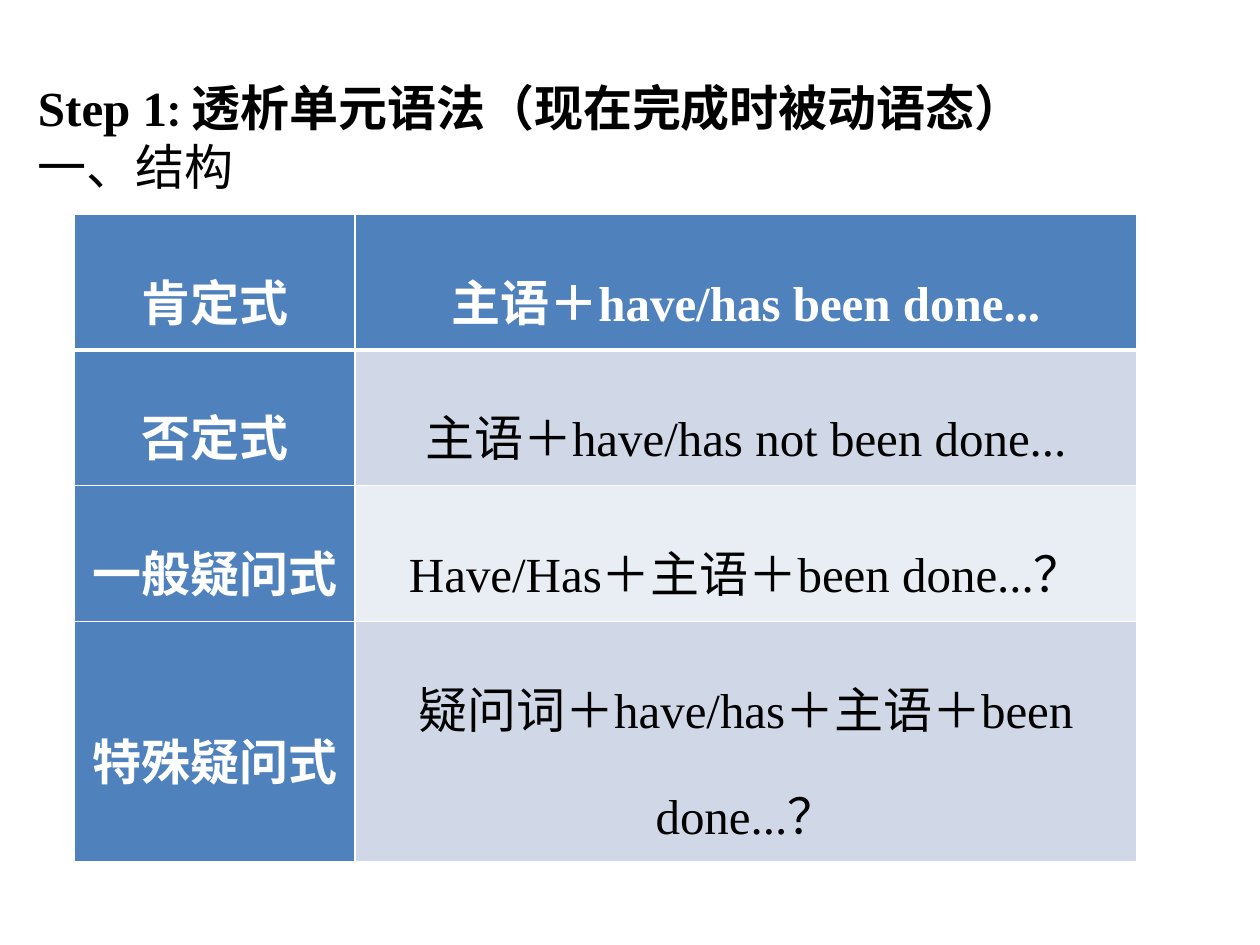
from lxml.etree import SubElement
from pptx import Presentation
from pptx.dml.color import RGBColor
from pptx.enum.text import MSO_ANCHOR, MSO_AUTO_SIZE, PP_ALIGN
from pptx.oxml.ns import qn
from pptx.util import Pt

WHITE = RGBColor(0xFF, 0xFF, 0xFF)
BLACK = RGBColor(0x00, 0x00, 0x00)
BLUE = RGBColor(0x4F, 0x81, 0xBD)
BAND_DARK = RGBColor(0xD0, 0xD8, 0xE8)
BAND_LIGHT = RGBColor(0xE9, 0xED, 0xF4)
FONT = "Times New Roman"
SIZE = Pt(28)

TITLE_LINES = [
    ([("Step 1", FONT), (": ", "Calibri"), ("透析单元语法（现在完成时被动语态）", FONT)], True),
    ([("一、结构", FONT)], False),
]
STRUCTURES = [
    ("肯定式", "主语＋have/has been done..."),
    ("否定式", "主语＋have/has not been done..."),
    ("一般疑问式", "Have/Has＋主语＋been done...？"),
    ("特殊疑问式", "疑问词＋have/has＋主语＋been done...？"),
]
COLUMN_WIDTHS = [160.5, 446.5]
ROW_HEIGHTS = [77.5, 77.5, 77.5, 137.5]
TABLE_LEFT, TABLE_TOP = 42.5, 122.5
CELL_INSET = Pt(8.5)


def add_title(slide):
    title = slide.shapes.title
    title.left, title.top, title.width, title.height = Pt(14.5), Pt(40.5), Pt(584.5), Pt(75)
    frame = title.text_frame
    frame.word_wrap = False
    frame.auto_size = MSO_AUTO_SIZE.SHAPE_TO_FIT_TEXT
    frame.vertical_anchor = MSO_ANCHOR.MIDDLE
    for index, (runs, bold) in enumerate(TITLE_LINES):
        paragraph = frame.add_paragraph() if index else frame.paragraphs[0]
        paragraph.alignment = PP_ALIGN.LEFT
        paragraph.font.size = SIZE
        paragraph.font.bold = bold
        paragraph.font.color.rgb = BLACK
        for text, font_name in runs:
            run = paragraph.add_run()
            run.text = text
            run.font.name = font_name


def set_borders(cell, widths):
    """Draw white borders; widths are points for left, right, top, bottom."""
    properties = cell._tc.get_or_add_tcPr()
    for side, width in zip("LRTB", widths):
        line = SubElement(properties, qn(f"a:ln{side}"), w=str(Pt(width)))
        fill = SubElement(line, qn("a:solidFill"))
        SubElement(fill, qn("a:srgbClr"), val=str(WHITE))


def fill_cell(cell, text, row, column):
    is_header = row == 0 or column == 0
    set_borders(cell, (1, 1, 3 if row == 1 else 1, 3 if row == 0 else 1))
    cell.fill.solid()
    cell.fill.fore_color.rgb = BLUE if is_header else (BAND_DARK if row % 2 else BAND_LIGHT)
    cell.vertical_anchor = MSO_ANCHOR.MIDDLE
    cell.margin_left = cell.margin_right = cell.margin_top = cell.margin_bottom = CELL_INSET
    cell.text = text
    paragraph = cell.text_frame.paragraphs[0]
    paragraph.alignment = PP_ALIGN.CENTER
    paragraph.line_spacing = 1.5
    paragraph.font.name = FONT
    paragraph.font.size = SIZE
    paragraph.font.bold = is_header
    paragraph.font.color.rgb = WHITE if is_header else BLACK


def add_structure_table(slide):
    table = slide.shapes.add_table(
        len(STRUCTURES), len(COLUMN_WIDTHS), Pt(TABLE_LEFT), Pt(TABLE_TOP),
        Pt(sum(COLUMN_WIDTHS)), Pt(sum(ROW_HEIGHTS))).table
    for column, width in zip(table.columns, COLUMN_WIDTHS):
        column.width = Pt(width)
    for row, height in zip(table.rows, ROW_HEIGHTS):
        row.height = Pt(height)
    for row, texts in enumerate(STRUCTURES):
        for column, text in enumerate(texts):
            fill_cell(table.cell(row, column), text, row, column)


def main():
    presentation = Presentation()
    presentation.slide_width, presentation.slide_height = Pt(720), Pt(540)
    slide = presentation.slides.add_slide(presentation.slide_layouts[5])
    add_structure_table(slide)
    add_title(slide)
    presentation.save("out.pptx")


if __name__ == "__main__":
    main()
